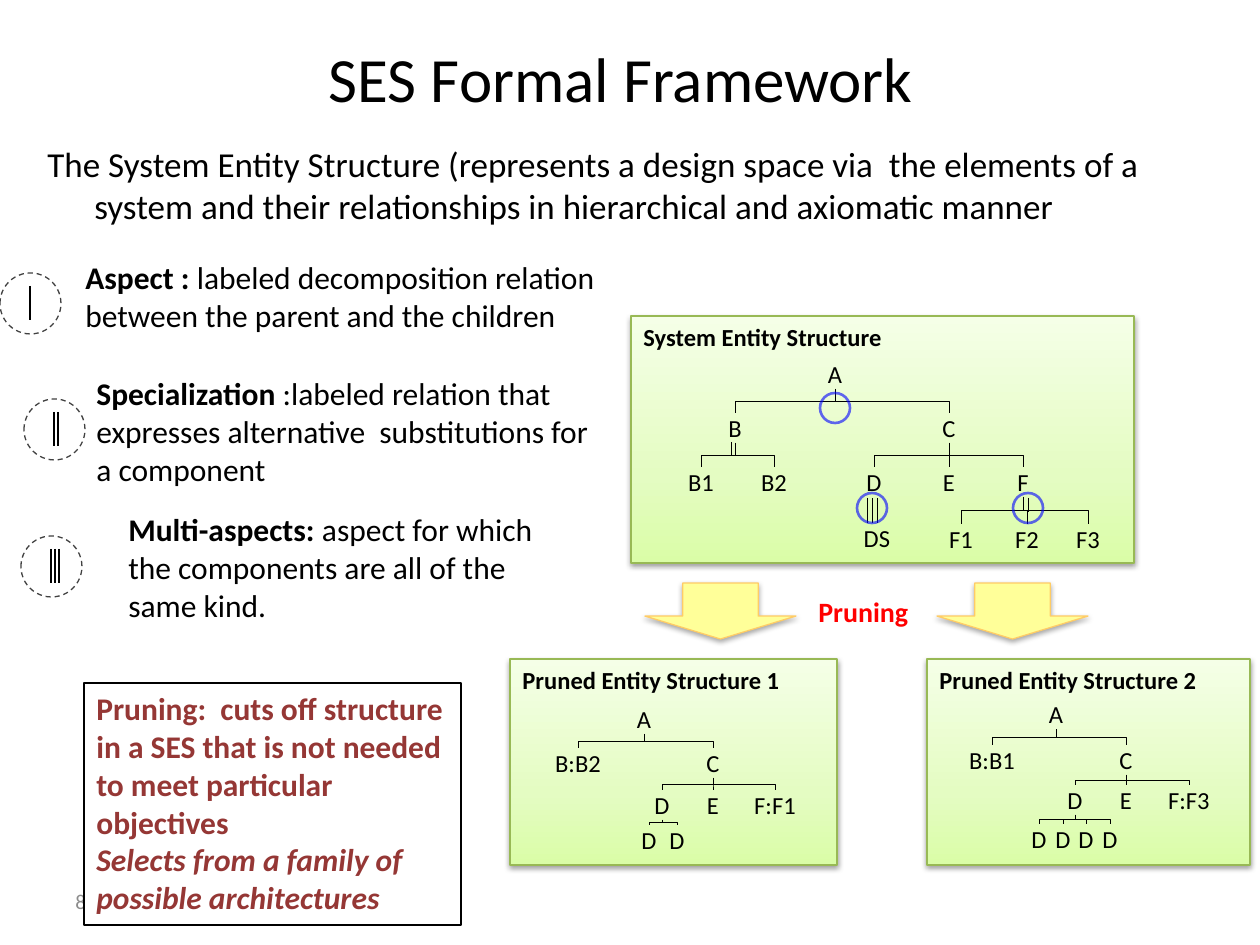
from copy import deepcopy

from lxml import etree
from pptx import Presentation
from pptx.dml.color import RGBColor
from pptx.enum.dml import MSO_LINE
from pptx.enum.shapes import MSO_CONNECTOR, MSO_SHAPE
from pptx.enum.text import MSO_ANCHOR, PP_ALIGN
from pptx.oxml.ns import qn
from pptx.util import Pt

STRAIGHT, ELBOW = MSO_CONNECTOR.STRAIGHT, MSO_CONNECTOR.ELBOW
RECTANGLE, OVAL, DOWN_ARROW = MSO_SHAPE.RECTANGLE, MSO_SHAPE.OVAL, MSO_SHAPE.DOWN_ARROW
MIDDLE, TOP = MSO_ANCHOR.MIDDLE, MSO_ANCHOR.TOP
CENTER, LEFT = PP_ALIGN.CENTER, PP_ALIGN.LEFT
DASH = MSO_LINE.DASH

PX_PER_INCH = 126
FONT = "Calibri"
LABEL_HEIGHT = 30
COLORS = {
    "black": "000000", "gray": "8C8C8C", "dash": "404040", "blue": "0000FF",
    "red": "FF0000", "maroon": "953735", "panel_line": "98B955",
    "arrow": "FFFF99", "arrow_line": "FFCC66",
}
PANEL_STOPS = [(0, "DAFDA7"), (0.35, "E4FCC2"), (1, "F5FFE7")]

# Panels: title, box, top of each tree level, tree of (label, center x, children)
PANELS = [
    ("System Entity Structure", (631, 316, 503, 247), (359, 413, 467, 524),
     ("A", 835, [
         ("B", 735, [("B1", 701, []), ("B2", 774, [])]),
         ("C", 949, [
             ("D", 874, []), ("E", 949, []),
             ("F", 1023, [("F1", 961, []), ("F2", 1027, []), ("F3", 1088, [])])])])),
    ("Pruned Entity Structure 1", (510, 659, 327, 206), (704, 748, 790, 825),
     ("A", 644, [
         ("B:B2", 578, []),
         ("C", 713, [
             ("D", 662, [("D", 649, []), ("D", 677, [])]),
             ("E", 713, []), ("F:F1", 775, [])])])),
    ("Pruned Entity Structure 2", (927, 659, 323, 206), (699, 745, 785, 824),
     ("A", 1056, [
         ("B:B1", 992, []),
         ("C", 1126, [
             ("D", 1075, [("D", x, []) for x in (1039, 1063, 1086, 1110)]),
             ("E", 1126, []), ("F:F3", 1189, [])])])),
]

# Relations: box, bold term, description, icon corner, number of bars
RELATIONS = [
    ((73, 252, 539, 89), "Aspect : ",
     "labeled decomposition relation between the parent and the children", (0, 273), 1),
    ((84, 368, 525, 127), "Specialization",
     " :labeled relation that expresses alternative  substitutions for a component",
     (24, 399), 2),
    ((116, 504, 455, 127), "Multi-aspects: ",
     "aspect for which the components are all of the same kind.", (21, 536), 3),
]


def px(value):
    return round(value * 914400 / PX_PER_INCH)


def rgb(name):
    return RGBColor.from_string(COLORS[name])


def add_text(page, area, paragraphs, size, color="black", align=LEFT,
             anchor=TOP, wrap=True, margins=None):
    """Each paragraph is a list of (text, bold, italic) spans."""
    box = page.shapes.add_textbox(*map(px, area))
    frame = box.text_frame
    frame.word_wrap = wrap
    frame.vertical_anchor = anchor
    if margins:
        frame.margin_left = frame.margin_right = px(margins[0])
        frame.margin_top = frame.margin_bottom = px(margins[1])
    for index, spans in enumerate(paragraphs):
        para = frame.add_paragraph() if index else frame.paragraphs[0]
        para.alignment = align
        for text, bold, italic in spans:
            span = para.add_run()
            span.text = text
            font = span.font
            font.name, font.size, font.bold, font.italic = FONT, Pt(size), bold, italic
            font.color.rgb = rgb(color)
    return box


def add_plain(page, area, text, size, bold=False, **options):
    return add_text(page, area, [[(text, bold, False)]], size, **options)


def add_label(page, text, center, top):
    width = 12 + 14 * len(text)
    add_plain(page, (center - width // 2, top, width, LABEL_HEIGHT), text, 14,
              align=CENTER, wrap=False, margins=(5, 0))


def add_line(shapes, start, end, width, kind=STRAIGHT):
    line = shapes.add_connector(kind, *map(px, (*start, *end)))
    line.line.color.rgb = rgb("black")
    line.line.width = Pt(width)
    etree.SubElement(line._element.spPr, qn("a:effectLst"))
    return line


def add_branch(page, parent, child):
    """Elbow that leaves downward: lay it out sideways, then turn it."""
    middle_x, middle_y = (parent[0] + child[0]) / 2, (parent[1] + child[1]) / 2
    half_x, half_y = abs(child[0] - parent[0]) / 2, (child[1] - parent[1]) / 2
    line = add_line(page.shapes, (middle_x - half_y, middle_y - half_x),
                    (middle_x + half_y, middle_y + half_x), 0.25, ELBOW)
    turn = line._element.spPr.xfrm
    turn.rot = 90
    if child[0] > parent[0]:
        turn.rot = 270
        turn.flipH = True


def add_tree(page, node, tops):
    text, center, children = node
    add_label(page, text, center, tops[0])
    for child in children:
        add_branch(page, (center, tops[0] + LABEL_HEIGHT), (child[1], tops[1]))
        add_tree(page, child, tops[1:])


def add_outline(shapes, kind, area, color, width):
    shape = shapes.add_shape(kind, *map(px, area))
    shape.fill.background()
    shape.line.color.rgb = rgb(color)
    shape.line.width = Pt(width)
    shape.shadow.inherit = False
    return shape


def add_drop_shadow(shape, opacity):
    effects = shape._element.spPr.find(qn("a:effectLst"))
    shadow = etree.SubElement(effects, qn("a:outerShdw"), blurRad="40000",
                              dist="20000", dir="5400000", rotWithShape="0")
    color = etree.SubElement(shadow, qn("a:srgbClr"), val=COLORS["black"])
    etree.SubElement(color, qn("a:alpha"), val=str(opacity * 1000))


def add_panel(page, title, area, tops, tree):
    panel = add_outline(page.shapes, RECTANGLE, area, "panel_line", 0.75)
    panel.fill.gradient()
    panel.fill.gradient_angle = 90
    stop_list = panel._element.spPr.find(qn("a:gradFill")).find(qn("a:gsLst"))
    stop_list.insert(1, deepcopy(stop_list[0]))
    for stop, (position, color) in zip(panel.fill.gradient_stops, PANEL_STOPS):
        stop.position = position
        stop.color.rgb = RGBColor.from_string(color)
    add_drop_shadow(panel, 38)
    add_plain(page, (area[0], area[1], 285, 43), title, 14, bold=True, wrap=False)
    add_tree(page, tree, tops)


def add_relation(page, area, term, description, corner, bars):
    add_text(page, area, [[(term, True, False), (description, False, False)]], 18)
    icon = page.shapes.add_group_shape()
    left, top = corner
    circle = add_outline(icon.shapes, OVAL, (left, top, 61, 61), "dash", 0.75)
    circle.line.dash_style = DASH
    for bar in range(bars):
        x = left + 30 + 4 * bar
        add_line(icon.shapes, (x, top + 13), (x, top + 47), 1)


def add_marker(page, left, top):
    ring = add_outline(page.shapes, OVAL, (left, top, 30, 30), "blue", 1.5)
    color = ring.line._ln.find(".//" + qn("a:srgbClr"))
    etree.SubElement(color, qn("a:alpha"), val="60000")


def add_arrow(page, left):
    arrow = add_outline(page.shapes, DOWN_ARROW, (left, 583, 151, 56), "arrow_line", 0.75)
    arrow.adjustments[0], arrow.adjustments[1] = 0.5, 0.41
    arrow.fill.solid()
    arrow.fill.fore_color.rgb = rgb("arrow")
    add_drop_shadow(arrow, 35)


def main():
    deck = Presentation()
    deck.slide_width, deck.slide_height = px(1260), px(945)
    page = deck.slides.add_slide(deck.slide_layouts[6])

    # Heading, introduction and page number
    add_plain(page, (47, 38, 1162, 78), "SES Formal Framework ", 36,
              align=CENTER, anchor=MIDDLE)
    intro = add_plain(
        page, (35, 136, 1162, 106),
        "The System Entity Structure (represents a design space via  the elements of a "
        "system and their relationships in hierarchical and axiomatic manner", 20)
    indent = intro.text_frame.paragraphs[0]._p.get_or_add_pPr()
    indent.set("marL", str(px(47)))
    indent.set("indent", str(-px(47)))
    add_plain(page, (63, 876, 294, 50), "8", 12, color="gray", anchor=MIDDLE)

    # Relations and structure trees
    for relation in RELATIONS:
        add_relation(page, *relation)
    for panel in PANELS:
        add_panel(page, *panel)

    # Multi-aspect, specialization bars and choice markers
    add_label(page, "DS", 877, 523)
    for x, top, bottom in [(867, 498, 523), (872, 498, 523), (877, 498, 523),
                           (731, 442, 456), (1028, 498, 512)]:
        add_line(page.shapes, (x, top), (x, bottom), 0.25)
    for left, top in [(820, 393), (1013, 493), (857, 493)]:
        add_marker(page, left, top)

    # Pruning step and its explanation
    for left in (645, 937):
        add_arrow(page, left)
    add_plain(page, (806, 588, 117, 47), "Pruning", 16, bold=True, color="red", wrap=False)
    note = add_text(page, (84, 683, 377, 242), [
        [("Pruning:  cuts off structure in a SES that is not needed to meet "
          "particular objectives", True, False)],
        [("Selects from a family of possible architectures", True, True)],
    ], 18, color="maroon")
    note.line.color.rgb = rgb("black")
    note.line.width = Pt(0.75)

    deck.save("out.pptx")


if __name__ == "__main__":
    main()
